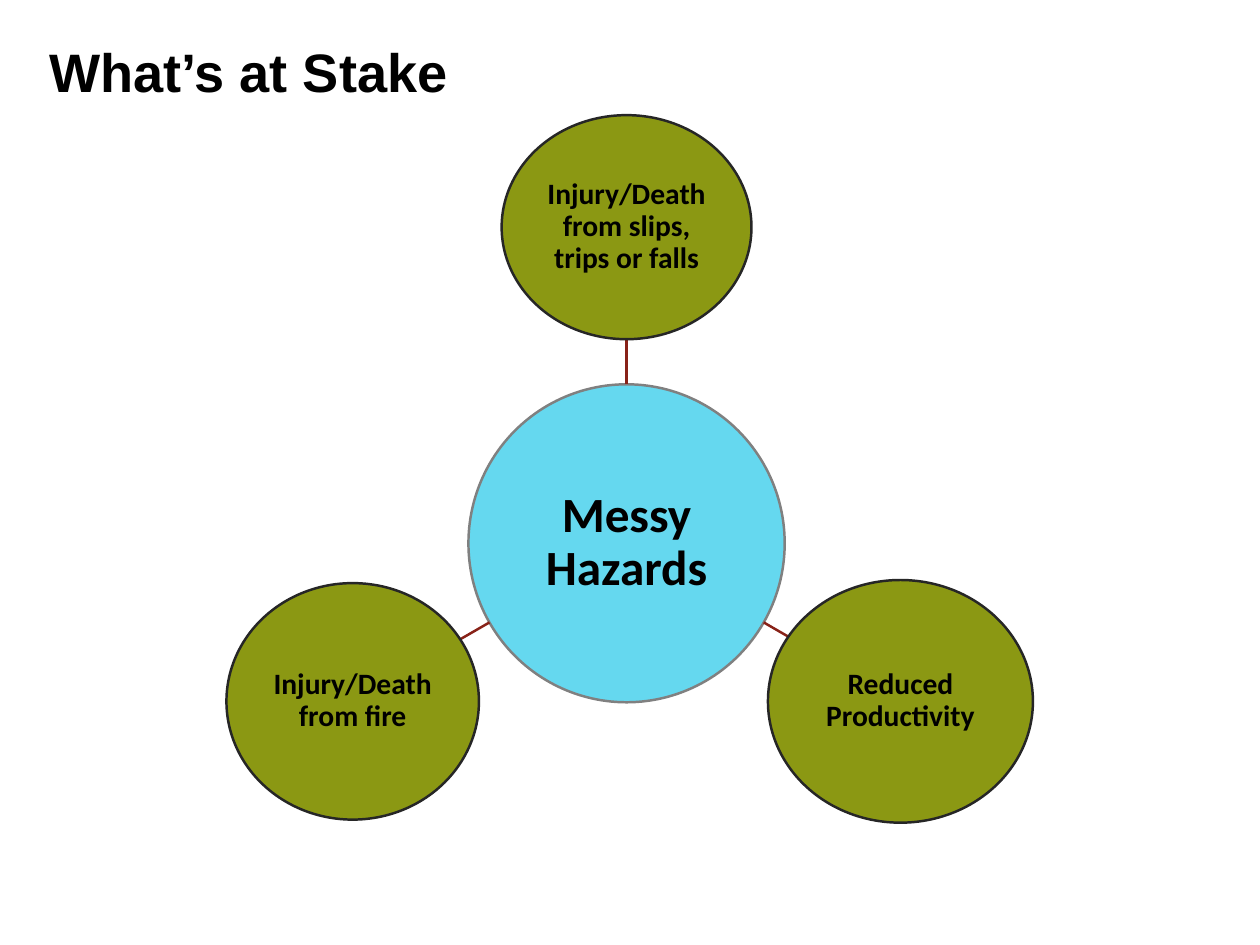
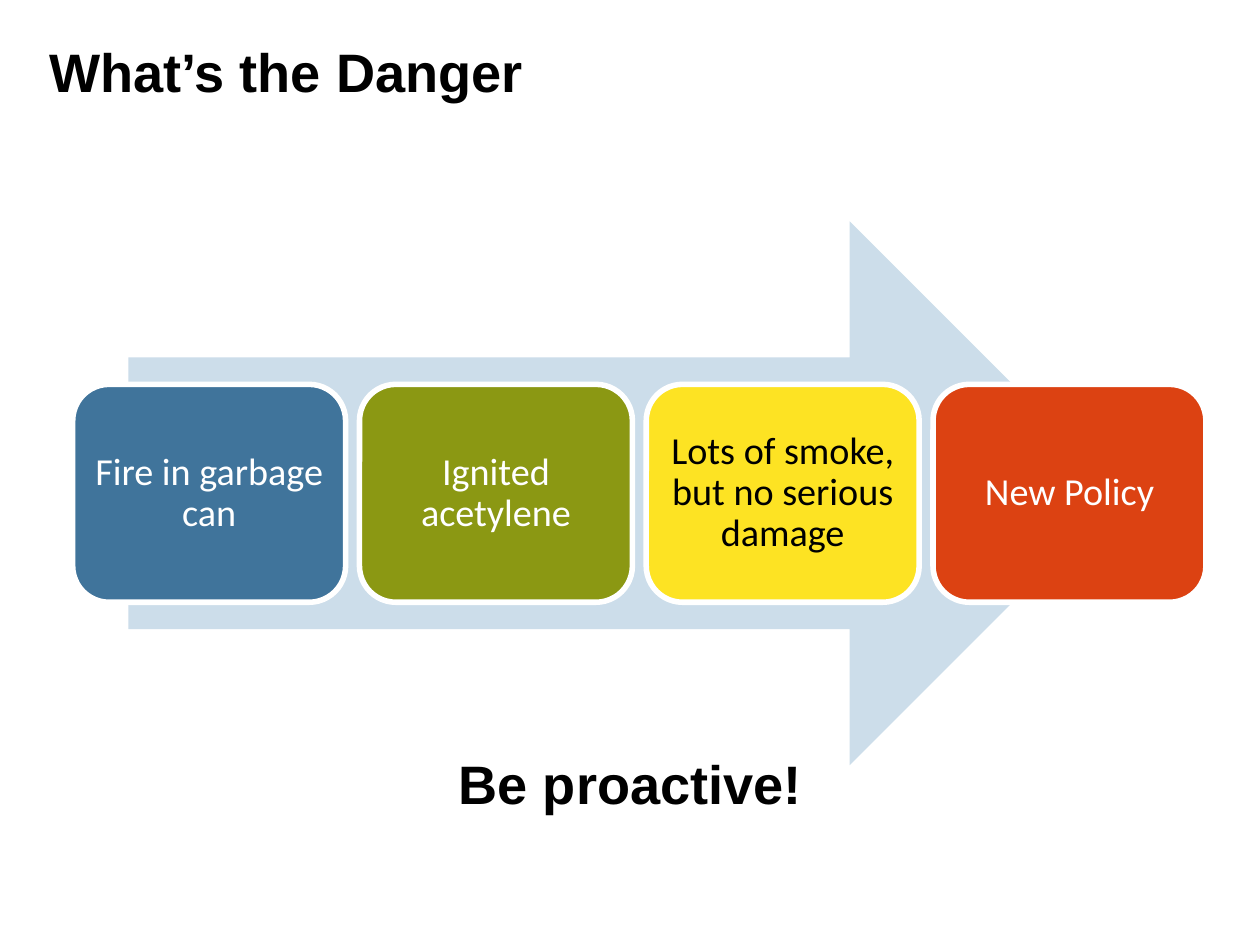
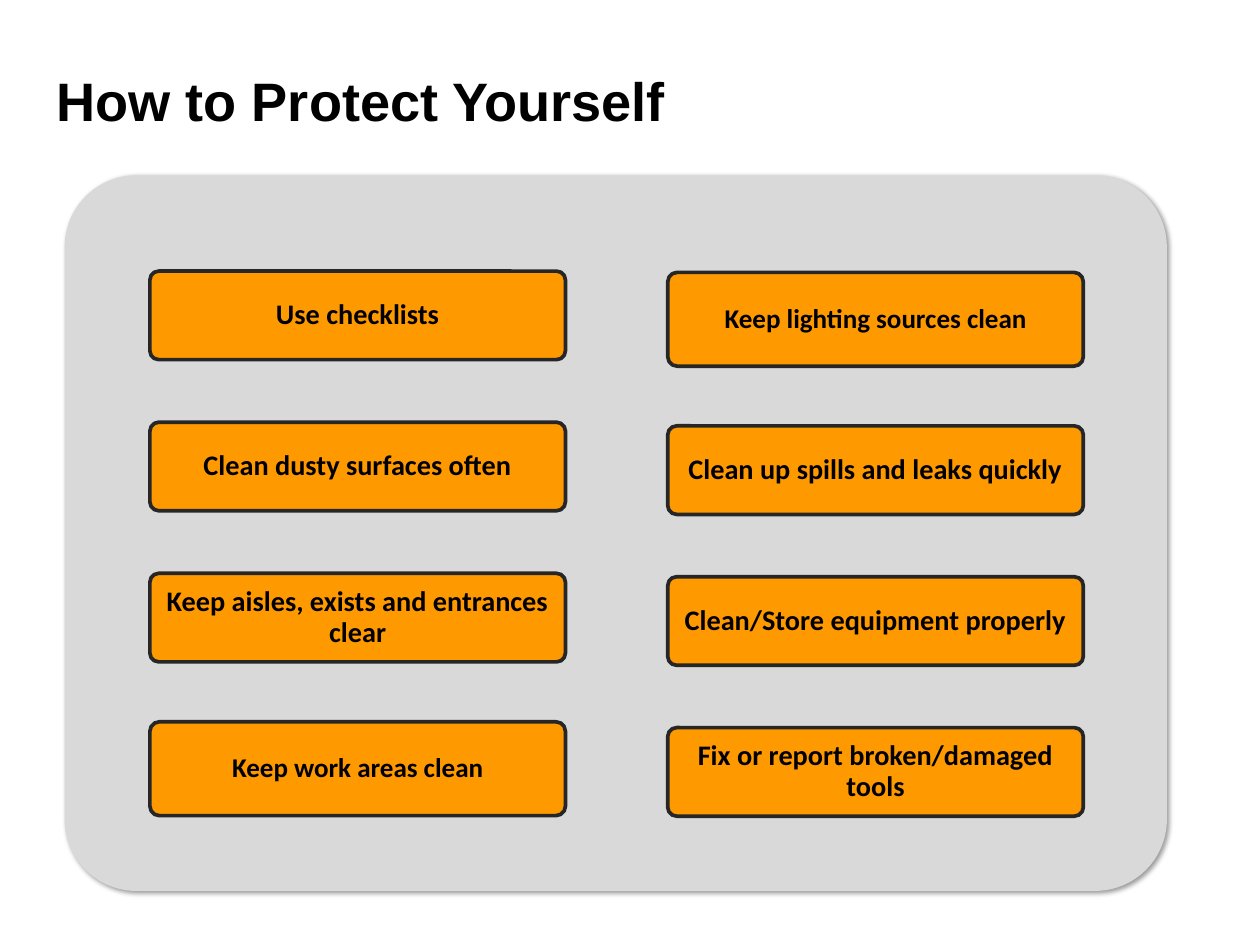
from dataclasses import dataclass
from math import cos, hypot, radians, sin

from lxml.etree import SubElement
from pptx import Presentation
from pptx.dml.color import RGBColor
from pptx.enum.shapes import MSO_CONNECTOR, MSO_SHAPE as Preset
from pptx.enum.text import MSO_ANCHOR as Anchor, MSO_AUTO_SIZE as AutoSize, PP_ALIGN as Align
from pptx.oxml.ns import qn
from pptx.util import Inches, Pt


@dataclass(frozen=True)
class Theme:
    heading_font: str = "Arial"
    label_font: str = "Calibri"
    black: str = "000000"
    white: str = "FFFFFF"
    ink: str = "262626"
    gray: str = "808080"
    panel: str = "D9D9D9"
    sky: str = "65D8EF"
    pale: str = "CCDDEA"
    blue: str = "40749B"
    olive: str = "8B9813"
    yellow: str = "FDE323"
    red: str = "DC4212"
    orange: str = "FF9900"
    spoke: str = "882218"
    heading_size: int = 44
    hub_size: int = 40
    step_size: int = 31
    satellite_size: int = 24
    card_size: int = 23
    tall_card_size: int = 22


THEME = Theme()
TITLE_ONLY = 5

# Square grid: 100 columns by 75 rows
WIDTH, HEIGHT = Inches(14.22), Inches(10.67)
UNIT = WIDTH / 100
HEADING_WIDTH, HEADING_HEIGHT = 65.9, 3.87


def grid(*lengths):
    return [round(length * UNIT) for length in lengths]


def centred(x, y, width, height):
    return x - width / 2, y - height / 2, width, height


def along(start, angle, distance):
    return (start[0] + distance * cos(radians(angle)),
            start[1] + distance * sin(radians(angle)))


def reach(width, height, angle):
    """Distance from an ellipse's centre to its edge in one direction."""
    return 1 / hypot(2 * cos(radians(angle)) / width, 2 * sin(radians(angle)) / height)


def set_all(target, values):
    for name, value in values.items():
        setattr(target, name, value)


def write(box, text, size, color=THEME.black, font=THEME.label_font, bold=True,
          align=Align.CENTER, anchor=Anchor.MIDDLE, leading=0.9, insets=(1.5, 1.5)):
    frame = box.text_frame
    side, end = map(Pt, insets)
    set_all(frame, {
        "word_wrap": True, "auto_size": AutoSize.NONE, "vertical_anchor": anchor,
        "margin_left": side, "margin_right": side, "margin_top": end, "margin_bottom": end,
    })
    para = frame.paragraphs[0]
    set_all(para, {"alignment": align, "line_spacing": leading, "space_before": Pt(0)})
    span = para.add_run()
    span.text = text
    set_all(span.font, {"name": font, "size": Pt(size), "bold": bold})
    span.font.color.rgb = RGBColor.from_string(color)


def write_heading(box, text, align=Align.LEFT):
    write(box, text, THEME.heading_size, font=THEME.heading_font, align=align,
          anchor=Anchor.TOP, leading=1.0, insets=(10, 5))


def add_page(deck, title, left=2.95, top=2.6, height=HEADING_HEIGHT):
    page = deck.slides.add_slide(deck.slide_layouts[TITLE_ONLY])
    box = page.shapes.title
    places = grid(left, top, HEADING_WIDTH, height)
    set_all(box, dict(zip(("left", "top", "width", "height"), places)))
    write_heading(box, title)
    return page


def add_block(page, preset, place, fill, line=None, weight=2, corner=None):
    block = page.shapes.add_shape(preset, *grid(*place))
    block.shadow.inherit = False
    block.fill.solid()
    block.fill.fore_color.rgb = RGBColor.from_string(fill)
    if line:
        block.line.color.rgb = RGBColor.from_string(line)
        block.line.width = Pt(weight)
    else:
        block.line.fill.background()
    if corner is not None:
        block.adjustments[0] = corner
    return block


def add_spoke(page, start, end):
    spoke = page.shapes.add_connector(MSO_CONNECTOR.STRAIGHT, *grid(*start, *end))
    spoke.line.color.rgb = RGBColor.from_string(THEME.spoke)
    spoke.line.width = Pt(2)
    SubElement(spoke.element.spPr, qn("a:effectLst"))


def cast_shadow(block, blur=4, distance=3, angle=45, opacity=40):
    effects = block.element.spPr.find(qn("a:effectLst"))
    shadow = SubElement(effects, qn("a:outerShdw"), {
        "blurRad": str(Pt(blur)), "dist": str(Pt(distance)),
        "dir": str(angle * 60000), "algn": "tl", "rotWithShape": "0",
    })
    color = SubElement(shadow, qn("a:srgbClr"), val=THEME.black)
    SubElement(color, qn("a:alpha"), val=str(opacity * 1000))


# Hub with three satellites, evenly spread around it
def build_stakes(deck):
    page = add_page(deck, "What’s at Stake")
    hub, hub_size, radius = (49.73, 43.14), (25.1, 25.25), 25.1
    satellites = [
        (-90, (19.83, 17.79), "Injury/Death from slips, trips or falls"),
        (30, (21.03, 19.27), "Reduced Productivity"),
        (150, (20.04, 18.78), "Injury/Death from fire"),
    ]
    circle = add_block(page, Preset.OVAL, centred(*hub, *hub_size), THEME.sky, THEME.gray)
    write(circle, "Messy Hazards", THEME.hub_size, insets=(2, 2))
    for angle, size, text in satellites:
        add_spoke(page, along(hub, angle, reach(*hub_size, angle)),
                  along(hub, angle, radius - reach(*size, angle)))
        circle = add_block(page, Preset.OVAL, centred(*along(hub, angle, radius), *size),
                           THEME.olive, THEME.ink)
        write(circle, text, THEME.satellite_size)


# Four steps along an arrow
def build_danger(deck):
    page = add_page(deck, "What’s the Danger")
    add_block(page, Preset.RIGHT_ARROW, (10.2, 17.58, 78.83, 43.18), THEME.pale)
    steps = [
        ("Fire in garbage can", THEME.blue, THEME.white),
        ("Ignited acetylene", THEME.olive, THEME.white),
        ("Lots of smoke, but no serious damage", THEME.yellow, THEME.black),
        ("New Policy", THEME.red, THEME.white),
    ]
    for index, (text, fill, color) in enumerate(steps):
        place = (5.77 + 22.76 * index, 30.52, 21.66, 17.3)
        step = add_block(page, Preset.ROUNDED_RECTANGLE, place, fill, THEME.white, 4.5)
        write(step, text, THEME.step_size, color, bold=False, insets=(9.4, 9.4))
    slogan = page.shapes.add_textbox(*grid(17.09, 59.1, HEADING_WIDTH, HEADING_HEIGHT))
    write_heading(slogan, "Be proactive!", Align.CENTER)


# Two columns of cards on a panel
def build_protection(deck):
    page = add_page(deck, "How to Protect Yourself", left=3.52, top=4.85, height=8.86)
    panel = add_block(page, Preset.ROUNDED_RECTANGLE, (5.13, 13.92, 87.48, 56.82),
                      THEME.panel, corner=0.1)
    cast_shadow(panel)
    card_width, card_height, tall_height = 32.98, 7.03, 7.45
    tall_cards = {"Keep work areas clean", "Keep lighting sources clean"}
    columns = [
        (11.9, 25.04, 12, ["Use checklists", "Clean dusty surfaces often",
                           "Keep aisles, exists and entrances clear",
                           "Keep work areas clean"]),
        (53, 25.35, 11.98, ["Keep lighting sources clean",
                            "Clean up spills and leaks quickly",
                            "Clean/Store equipment properly",
                            "Fix or report broken/damaged tools"]),
    ]
    for left, first, pitch, texts in columns:
        for row, text in enumerate(texts):
            tall = text in tall_cards
            place = centred(left + card_width / 2, first + pitch * row,
                            card_width, tall_height if tall else card_height)
            card = add_block(page, Preset.ROUNDED_RECTANGLE, place, THEME.orange,
                             THEME.ink, 3, corner=0.1)
            write(card, text, THEME.tall_card_size if tall else THEME.card_size,
                  insets=(4.4, 3.4))


def main():
    deck = Presentation()
    set_all(deck, {"slide_width": WIDTH, "slide_height": HEIGHT})
    for build in (build_stakes, build_danger, build_protection):
        build(deck)
    deck.save("out.pptx")


if __name__ == "__main__":
    main()
